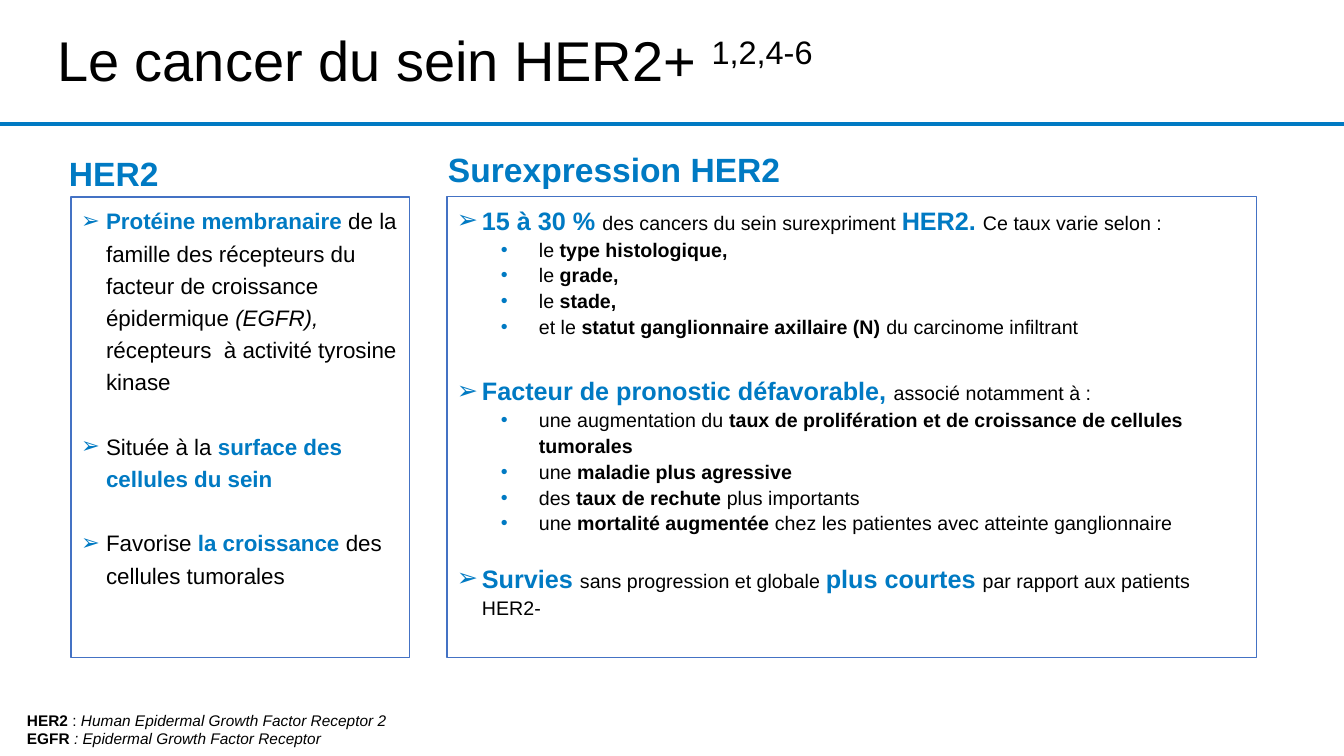
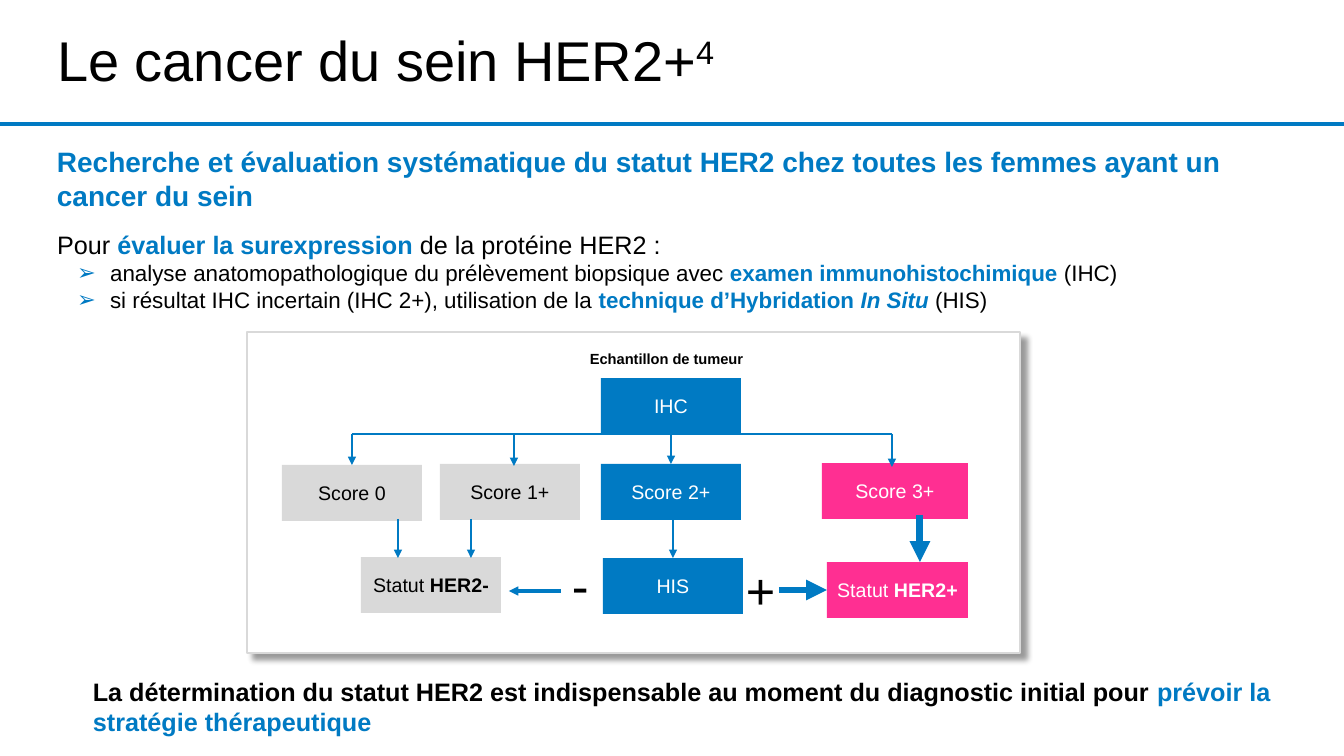
from lxml import etree
from pptx import Presentation
from pptx import util as u
from pptx.dml.color import RGBColor
from pptx.enum import shapes as kinds, text
from pptx.oxml.ns import qn

PX = 914400 / 100.8
FONT = "Arial"
BLUE = RGBColor(0x00, 0x7A, 0xC3)
PINK = RGBColor(0xFF, 0x2F, 0x92)
GREY = RGBColor(0xD9, 0xD9, 0xD9)
BORDER = RGBColor(0x44, 0x72, 0xC4)
BLACK = RGBColor(0x00, 0x00, 0x00)
WHITE = RGBColor(0xFF, 0xFF, 0xFF)
ARROW, DOT = "➢", "•"
LEFT, CENTER = text.PP_ALIGN.LEFT, text.PP_ALIGN.CENTER


def px(*lengths):
    return [u.Emu(round(length * PX)) for length in lengths]


def write(frame, paragraphs, size, color=BLACK, accent_size=None,
          align=LEFT, line_spacing=1.0):
    """Fill a frame with (runs, bullet, margin, hanging, space before) paragraphs.

    A run is (text, style); style words are bold, italic, accent and super.
    """
    for index, (runs, bullet, margin, hanging, before) in enumerate(paragraphs):
        paragraph = frame.add_paragraph() if index else frame.paragraphs[0]
        paragraph.alignment = align
        paragraph.line_spacing = line_spacing
        paragraph.space_before = u.Pt(before)
        properties = paragraph._p.get_or_add_pPr()
        properties.set("marL", str(px(margin)[0]))
        properties.set("indent", str(px(-hanging)[0]))
        if bullet:
            bullet_color = etree.SubElement(properties, qn("a:buClr"))
            etree.SubElement(bullet_color, qn("a:srgbClr"), val=str(BLUE))
            etree.SubElement(properties, qn("a:buFont"), typeface=FONT)
            etree.SubElement(properties, qn("a:buChar"), char=bullet)
        else:
            etree.SubElement(properties, qn("a:buNone"))
        for words, style in runs:
            run = paragraph.add_run()
            run.text = words
            accent = "accent" in style
            run.font.name = FONT
            run.font.size = u.Pt(accent_size if accent and accent_size else size)
            run.font.bold = accent or "bold" in style
            run.font.italic = "italic" in style
            run.font.color.rgb = BLUE if accent else color
            if "super" in style:
                run._r.get_or_add_rPr().set("baseline", "30000")


def add_line(shapes, begin, end, width, arrow=True):
    line = shapes.add_connector(kinds.MSO_CONNECTOR.STRAIGHT, *px(*begin, *end))
    line.line.color.rgb = BLUE
    line.line.width = u.Pt(width)
    if arrow:
        etree.SubElement(line.line._get_or_add_ln(), qn("a:tailEnd"), type="triangle")
    etree.SubElement(line.element.spPr, qn("a:effectLst"))
    return line


presentation = Presentation()
presentation.slide_width, presentation.slide_height = px(1344, 756)
layout = presentation.slide_layouts[1]
title = layout.placeholders[0]
title.left, title.top, title.width, title.height = px(47, 15, 1259, 96)

# Titles and bodies
slides = []
for title_runs, body_box in [
    ([("Le cancer du sein HER2+ ", ""), ("1,2,4-6", "super")], (71, 197, 339, 461)),
    ([("Le cancer du sein HER2+", ""), ("4", "super")], (47, 224, 1168, 113)),
]:
    slide = presentation.slides.add_slide(layout)
    write(slide.shapes.title.text_frame, [(title_runs, "", 0, 0, 0)], 40, line_spacing=0.9)
    body = slide.placeholders[1]
    body.left, body.top, body.width, body.height = px(*body_box)
    body.text_frame.auto_size = text.MSO_AUTO_SIZE.NONE
    slides.append(slide)
overview, testing = slides

# The rule under the title belongs to the layout
rule = add_line(overview.shapes, (0, 124), (1344, 124), 2.25, arrow=False)
rule.element.nvCxnSpPr.cNvPr.set("id", "20")
layout.shapes.element.append(rule.element)

# Slide 1: two outlined panels
protein = overview.placeholders[1]
overexpression = overview.shapes.add_shape(
    kinds.MSO_SHAPE.RECTANGLE, *px(447, 197, 810, 461))
overexpression.shadow.inherit = False
for panel in (protein, overexpression):
    panel.fill.background()
    panel.line.color.rgb = BORDER
    panel.line.width = u.Pt(0.75)
    panel.text_frame.vertical_anchor = text.MSO_ANCHOR.TOP

protein_points = [
    [("Protéine membranaire ", "accent"),
     ("de la famille des récepteurs du facteur de croissance épidermique ", ""),
     ("(EGFR), ", "italic"), ("récepteurs  à activité tyrosine kinase", "")],
    [("Située à la ", ""), ("surface des cellules du sein", "accent")],
    [("Favorise", ""), (" la croissance ", "accent"), ("des cellules tumorales", "")],
]
write(protein.text_frame,
      [(runs, ARROW, 25, 25, 23 if index else 0)
       for index, runs in enumerate(protein_points)],
      16, line_spacing=1.2)

overexpression_points = [
    (0, [("15 à 30 % ", "accent"), ("des cancers du sein surexpriment ", ""),
         ("HER2. ", "accent"), ("Ce taux varie selon :", "")],
     [[("le ", ""), ("type histologique,", "bold")],
      [("le ", ""), ("grade,", "bold")],
      [("le ", ""), ("stade,", "bold")],
      [("et le ", ""), ("statut ganglionnaire axillaire (N) ", "bold"),
       ("du carcinome infiltrant", "")]]),
    (24, [("Facteur de pronostic défavorable, ", "accent"), ("associé notamment à :", "")],
     [[("une augmentation du ", ""),
       ("taux de prolifération et de croissance de cellules tumorales", "bold")],
      [("une ", ""), ("maladie plus agressive", "bold")],
      [("des ", ""), ("taux de rechute ", "bold"), ("plus importants", "")],
      [("une ", ""), ("mortalité augmentée ", "bold"),
       ("chez les patientes avec atteinte ganglionnaire", "")]]),
    (18, [("Survies ", "accent"), ("sans progression et globale ", ""),
          ("plus courtes ", "accent"), ("par rapport aux patients HER2-", "")], []),
]
paragraphs = []
for before, runs, details in overexpression_points:
    paragraphs.append((runs, ARROW, 25, 25, before))
    paragraphs += [(detail, DOT, 82, 38, 0) for detail in details]
write(overexpression.text_frame, paragraphs, 14, accent_size=18, line_spacing=1.1)

# Slide 2: how HER2 is assessed
write(testing.placeholders[1].text_frame, [
    ([("Pour ", ""), ("évaluer la surexpression ", "accent"),
      ("de la protéine HER2 :", "")], "", 0, 0, 0)], 18)
methods = [
    [("analyse anatomopathologique du prélèvement biopsique avec ", ""),
     ("examen immunohistochimique ", "accent"), ("(IHC)", "")],
    [("si résultat IHC incertain (IHC 2+), utilisation de la ", ""),
     ("technique d’Hybridation ", "accent"), ("In Situ ", "accent italic"), ("(HIS)", "")],
]
for runs in methods:
    paragraph = testing.placeholders[1].text_frame.add_paragraph()
    # One-paragraph view of the frame keeps the size of each level apart
    write(type("Line", (), {"paragraphs": [paragraph]}),
          [(runs, ARROW, 53, 33, 0)], 16)

# Decision tree on a card
tree = testing.shapes.add_group_shape().shapes
card = tree.add_shape(kinds.MSO_SHAPE.RECTANGLE, *px(247, 332, 773, 321))
card.fill.solid()
card.fill.fore_color.rgb = WHITE
card.line.color.rgb = GREY
card.line.width = u.Pt(1)
card.shadow.inherit = False
shadow = etree.SubElement(
    card.element.spPr.find(qn("a:effectLst")), qn("a:outerShdw"),
    blurRad=str(u.Pt(4)), dist=str(u.Pt(6)), dir="2700000", algn="tl", rotWithShape="0")
shadow_color = etree.SubElement(shadow, qn("a:srgbClr"), val=str(BLACK))
etree.SubElement(shadow_color, qn("a:alpha"), val="40000")

boxes = {}
for name, left, top, width, fill, runs in [
    ("IHC", 601, 378, 140, BLUE, [("IHC", "")]),
    ("Score 2+", 601, 464, 140, BLUE, [("Score 2+", "")]),
    ("Score 1+", 440, 464, 140, GREY, [("Score 1+", "")]),
    ("Score 0", 282, 465, 140, GREY, [("Score 0", "")]),
    ("Score 3+", 822, 463, 146, PINK, [("Score 3+", "")]),
    ("HIS", 603, 558, 140, BLUE, [("HIS", "")]),
    ("HER2+", 827, 562, 141, PINK, [("Statut ", ""), ("HER2+", "bold")]),
    ("HER2-", 361, 557, 140, GREY, [("Statut ", ""), ("HER2-", "bold")]),
]:
    box = tree.add_shape(kinds.MSO_SHAPE.RECTANGLE, *px(left, top, width, 56))
    box.shadow.inherit = False
    box.fill.solid()
    box.fill.fore_color.rgb = fill
    box.line.fill.background()
    frame = box.text_frame
    frame.margin_left = frame.margin_right = 0
    frame.vertical_anchor = text.MSO_ANCHOR.MIDDLE
    write(frame, [(runs, "", 0, 0, 0)], 14, BLACK if fill == GREY else WHITE, align=CENTER)
    boxes[name] = box

add_line(tree, (352, 434), (892, 434), 1.5, arrow=False)
for begin, end, width, source, target in [
    ((671, 434), (671, 464), 2, "IHC", "Score 2+"),
    ((352, 434), (352, 465), 2, None, "Score 0"),
    ((514, 434), (514, 466), 2, None, None),
    ((892, 434), (892, 467), 2, None, None),
    ((673, 510), (673, 558), 2, None, "HIS"),
    ((398, 519), (398, 558), 2, None, None),
    ((471, 519), (471, 558), 2, None, None),
    ((561, 591), (509, 591), 2.25, None, None),
    ((920, 515), (920, 562), 5, None, None),
    ((779, 590), (827, 590), 5, None, "HER2+"),
]:
    arrow = add_line(tree, begin, end, width)
    if source:
        arrow.begin_connect(boxes[source], 2)
    if target:
        arrow.end_connect(boxes[target], 0 if begin[0] == end[0] else 1)

# Free text on both slides
for shapes, box, size, wrap, lines in [
    (overview.shapes, (59, 148, 349, 51), 24, True, [[("HER2", "accent")]]),
    (overview.shapes, (438, 144, 550, 51), 24, True, [[("Surexpression HER2", "accent")]]),
    (overview.shapes, (17, 706, 1101, 47), 11, True,
     [[("HER2 ", "bold"), (": ", ""), ("Human Epidermal Growth Factor Receptor 2", "italic")],
      [("EGFR", "bold"), (" : Epidermal Growth Factor Receptor", "italic")]]),
    (testing.shapes, (47, 140, 1206, 88), 20, True,
     [[("Recherche et évaluation systématique du statut HER2 chez toutes les femmes "
        "ayant un cancer du sein", "accent")]]),
    (tree, (580, 345, 179, 28), 10.5, False, [[("Echantillon de tumeur", "bold")]]),
    (tree, (736, 554, 50, 72), 36, False, [[("+", "")]]),
    (tree, (562, 549, 37, 72), 36, False, [[("-", "")]]),
    (testing.shapes, (83, 671, 1211, 72), 18, True,
     [[("La détermination du statut HER2 est indispensable au moment du diagnostic "
        "initial pour ", "bold"), ("prévoir la stratégie thérapeutique", "accent")]]),
]:
    frame = shapes.add_textbox(*px(*box)).text_frame
    frame.word_wrap = wrap
    write(frame, [(runs, "", 0, 0, 0) for runs in lines], size)

presentation.save("out.pptx")
